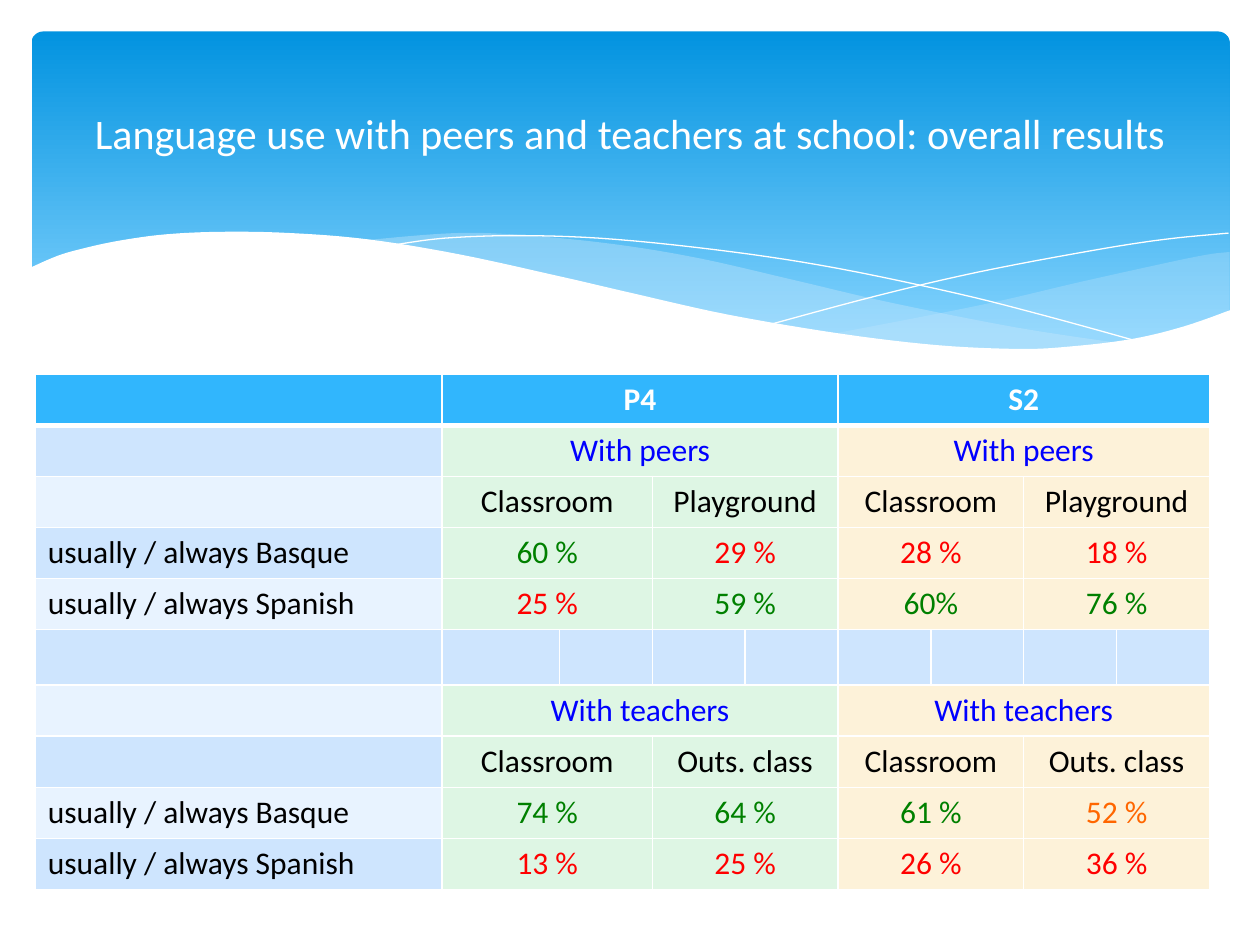
from dataclasses import dataclass
from typing import NamedTuple, Optional

from lxml.etree import SubElement
from pptx import Presentation
from pptx.dml.color import RGBColor
from pptx.enum.shapes import MSO_SHAPE
from pptx.enum.text import MSO_ANCHOR, PP_ALIGN
from pptx.oxml.ns import qn
from pptx.util import Emu, Inches, Pt


@dataclass(frozen=True)
class Theme:
    font: str = "Calibri"
    title_size: int = 24
    cell_size: int = 18
    white: str = "FFFFFF"
    black: str = "000000"
    banner_top: str = "0293E0"
    banner_bottom: str = "83D3FE"
    veil: str = "C6E7FC"
    header: str = "31B6FD"
    bands: tuple = ("E8F3FF", "CEE5FE")
    groups: tuple = ("DEF6E4", "FDF2D9")
    heading: str = "0000FF"
    high: str = "008000"
    middle: str = "FF6600"
    low: str = "FF0000"


class Box(NamedTuple):
    left: float
    top: float
    width: float
    height: float

    def lengths(self) -> list:
        return [grid(value) for value in self]


class Wave(NamedTuple):
    strands: tuple
    fill: Optional[str] = None
    opacity: int = 100


class Row(NamedTuple):
    kind: str
    label: str
    entries: tuple


THEME = Theme()
GRID_COLUMNS, GRID_ROWS = 100, 75
CELL = Inches(10) // GRID_COLUMNS

BANNER = Box(2.5, 2.5, 95.1, 27)
TITLE = Box(5, 3.7, 90, 13.7)
TABLE = Box(2.8, 29.7, 93.2, 40.8)
LABEL_COLUMN, FIRST_COLUMN = 32.3, 9.3
GAP_ROW = 4.4
VALUE_COLUMNS = 8

WAVES = (
    Wave((
        ((97.6, 20), (94.8, 20.4), (86.1, 22.3), (77.9, 24.2), (66.1, 26.5)),
        ((66.1, 26.5), (71.9, 27.2), (76.9, 27.7), (81.4, 27.8), (86.3, 27.5),
         (90.5, 26.9), (94.2, 25.9), (97.6, 24.7)),
        ((97.6, 24.7), (97.6, 20)),
    ), THEME.veil, 29),
    Wave((
        ((89.3, 27.3), (80.7, 26), (70.6, 24), (62.9, 22.2), (55.5, 20.5),
         (48.9, 19.4), (42, 18.7), (36.1, 18.5), (28.6, 19.1)),
        ((28.6, 19.1), (36.2, 20.3), (44.9, 22.2), (56.6, 24.8), (65, 26.4),
         (73.6, 27.5), (80.7, 27.8), (85.7, 27.7), (89.3, 27.3)),
    ), THEME.veil, 40),
    Wave((((30.9, 19.5), (35.3, 18.9), (41.6, 18.7), (48.9, 19), (58.2, 20),
           (66.5, 21.3), (76, 23.3), (83.1, 25.1), (90.7, 27.2)),)),
    Wave((((61.3, 25.7), (69.5, 23.5), (77.6, 21.6), (86.6, 19.9),
           (92.4, 19), (97.5, 18.5)),)),
    Wave((
        ((97.7, 24.6), (94, 25.9), (89.9, 26.9), (85, 27.5), (80.9, 27.7),
         (74.4, 27.4), (66.8, 26.5), (57.9, 25), (50.3, 23.3), (44.7, 22),
         (36.5, 20.2), (29.2, 19), (23, 18.5), (17.7, 18.4), (13.2, 18.6),
         (9.5, 19.1), (6.7, 19.7), (4.6, 20.3), (2.3, 21.3)),
        ((2.3, 21.3), (2.3, 32.9)),
        ((2.3, 32.9), (97.7, 32.9)),
        ((97.7, 32.9), (97.7, 24.6)),
    ), THEME.white),
)

BASQUE, SPANISH = "usually / always Basque", "usually / always Spanish"
ROWS = (
    Row("header", "", ("P4", "S2")),
    Row("heading", "", ("With peers",) * 2),
    Row("place", "", ("Classroom", "Playground") * 2),
    Row("value", BASQUE, ("60 %", "29 %", "28 %", "18 %")),
    Row("value", SPANISH, ("25 %", "59 %", "60%", "76 %")),
    Row("gap", "", ("",) * VALUE_COLUMNS),
    Row("heading", "", ("With teachers",) * 2),
    Row("place", "", ("Classroom", "Outs. class") * 2),
    Row("value", BASQUE, ("74 %", "64 %", "61 %", "52 %")),
    Row("value", SPANISH, ("13 %", "25 %", "26 %", "36 %")),
)


def grid(value: float) -> Emu:
    return Emu(round(value * CELL))


def rgb(color: str) -> RGBColor:
    return RGBColor.from_string(color)


def smooth(points: tuple, steps: int = 6) -> list:
    if len(points) == 2:
        return list(points)
    padded = (points[0], *points, points[-1])
    curve = [points[0]]
    for before, start, end, after in zip(padded, padded[1:], padded[2:], padded[3:]):
        for step in range(1, steps + 1):
            t = step / steps
            curve.append(tuple(
                b + ((c - a) * t + (2 * a - 5 * b + 4 * c - d) * t ** 2
                     + (3 * b - a - 3 * c + d) * t ** 3) / 2
                for a, b, c, d in zip(before, start, end, after)))
    return curve


def draw_banner(slide) -> None:
    shape = slide.shapes.add_shape(MSO_SHAPE.ROUNDED_RECTANGLE, *BANNER.lengths())
    shape.adjustments[0] = 0.034
    shape.shadow.inherit = False
    shape.line.fill.background()
    shape.fill.gradient()
    shape.fill.gradient_angle = 270
    first, last = shape.fill.gradient_stops
    first.color.rgb, first.position = rgb(THEME.banner_top), 0
    last.color.rgb, last.position = rgb(THEME.banner_bottom), 0.9


def draw_wave(slide, wave: Wave) -> None:
    points = [(grid(x), grid(y)) for strand in wave.strands for x, y in smooth(strand)]
    builder = slide.shapes.build_freeform(*points[0], scale=1.0)
    builder.add_line_segments(points[1:], close=wave.fill is not None)
    shape = builder.convert_to_shape()
    shape.shadow.inherit = False
    if wave.fill is None:
        shape.fill.background()
        shape.line.color.rgb = rgb(THEME.white)
        shape.line.width = Pt(0)
        return
    shape.line.fill.background()
    shape.fill.solid()
    shape.fill.fore_color.rgb = rgb(wave.fill)
    if wave.opacity < 100:
        color = shape._element.spPr.find(qn("a:solidFill"))[0]
        SubElement(color, qn("a:alpha"), val=str(wave.opacity * 1000))


def write(paragraph, text: str, size: int, color: str, bold: bool = False,
          alignment: PP_ALIGN = PP_ALIGN.CENTER) -> None:
    paragraph.text = text
    paragraph.alignment = alignment
    paragraph.font.name = THEME.font
    paragraph.font.size = Pt(size)
    paragraph.font.bold = bold
    paragraph.font.color.rgb = rgb(color)


def draw_title(slide, text: str) -> None:
    frame = slide.shapes.add_textbox(*TITLE.lengths()).text_frame
    frame.word_wrap = True
    frame.vertical_anchor = MSO_ANCHOR.MIDDLE
    write(frame.paragraphs[0], text, THEME.title_size, THEME.white)


def paint_cell(cell, fill: str, bottom_width: int) -> None:
    properties = cell._tc.get_or_add_tcPr()
    for side, width in (("L", 1), ("R", 1), ("T", 1), ("B", bottom_width)):
        border = SubElement(properties, qn(f"a:ln{side}"), w=str(Pt(width)))
        SubElement(SubElement(border, qn("a:solidFill")), qn("a:srgbClr"), val=THEME.white)
    cell.fill.solid()
    cell.fill.fore_color.rgb = rgb(fill)


def text_color(kind: str, text: str) -> str:
    if kind == "value":
        share = int(text.strip(" %"))
        return THEME.high if share >= 55 else THEME.middle if share >= 50 else THEME.low
    return {"header": THEME.white, "heading": THEME.heading}.get(kind, THEME.black)


def draw_table(slide) -> None:
    table = slide.shapes.add_table(len(ROWS), VALUE_COLUMNS + 1, *TABLE.lengths()).table
    table.first_row = table.horz_banding = False
    other_column = (TABLE.width - LABEL_COLUMN - FIRST_COLUMN) / (VALUE_COLUMNS - 1)
    widths = (LABEL_COLUMN, FIRST_COLUMN) + (other_column,) * (VALUE_COLUMNS - 1)
    for column, width in zip(table.columns, widths):
        column.width = grid(width)
    for index, row in enumerate(ROWS):
        plain_height = (TABLE.height - GAP_ROW) / (len(ROWS) - 1)
        table.rows[index].height = grid(GAP_ROW if row.kind == "gap" else plain_height)
        is_header = row.kind == "header"
        band = THEME.header if is_header else THEME.bands[index % 2]
        for position in range(VALUE_COLUMNS + 1):
            group = THEME.groups[position > VALUE_COLUMNS // 2]
            fill = band if position == 0 or row.kind in ("header", "gap") else group
            paint_cell(table.cell(index, position), fill, 3 if is_header else 1)
        write(table.cell(index, 0).text_frame.paragraphs[0], row.label,
              THEME.cell_size, THEME.black, alignment=PP_ALIGN.LEFT)
        span = VALUE_COLUMNS // len(row.entries)
        for number, text in enumerate(row.entries):
            start = 1 + number * span
            cell = table.cell(index, start)
            if span > 1:
                cell.merge(table.cell(index, start + span - 1))
            write(cell.text_frame.paragraphs[0], text, THEME.cell_size,
                  text_color(row.kind, text), is_header)


def main() -> None:
    presentation = Presentation()
    presentation.slide_width = grid(GRID_COLUMNS)
    presentation.slide_height = grid(GRID_ROWS)
    slide = presentation.slides.add_slide(presentation.slide_layouts[6])
    draw_banner(slide)
    for wave in WAVES:
        draw_wave(slide, wave)
    draw_table(slide)
    draw_title(slide, "Language use with peers and teachers at school: overall results")
    presentation.save("out.pptx")


if __name__ == "__main__":
    main()
